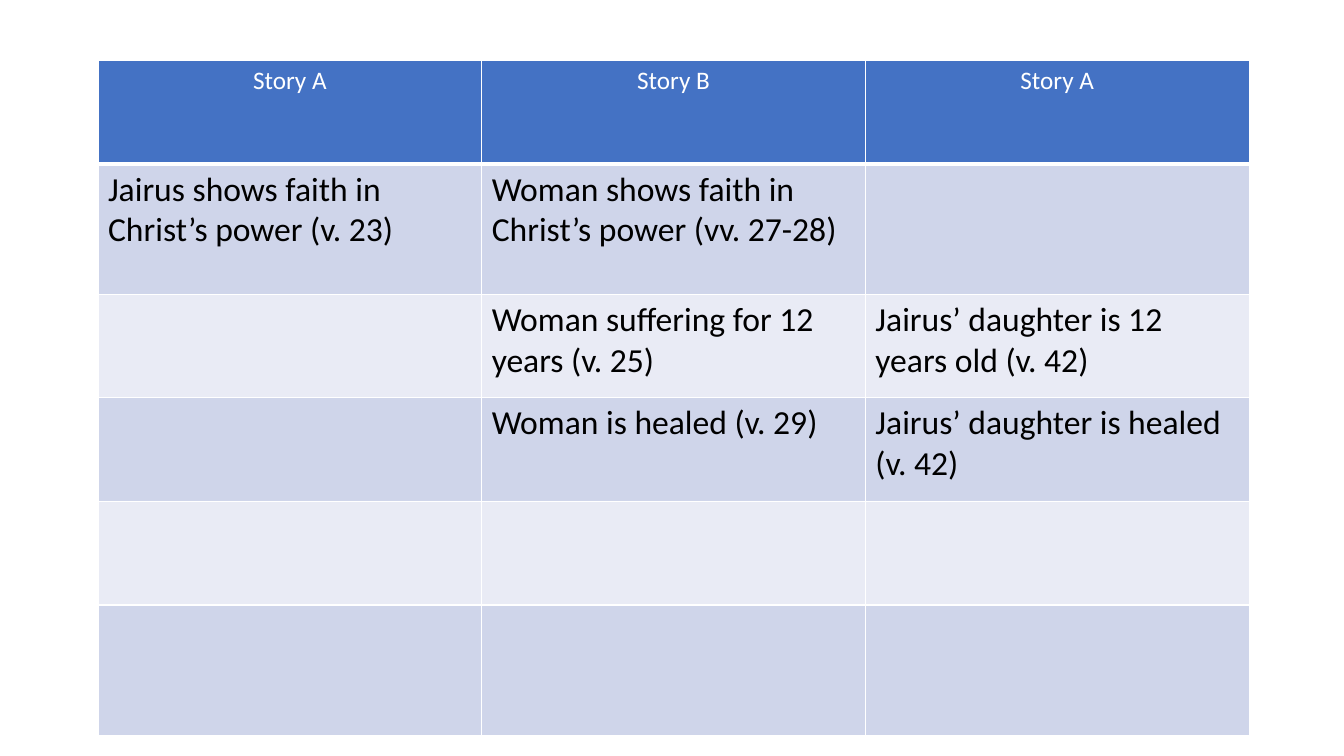
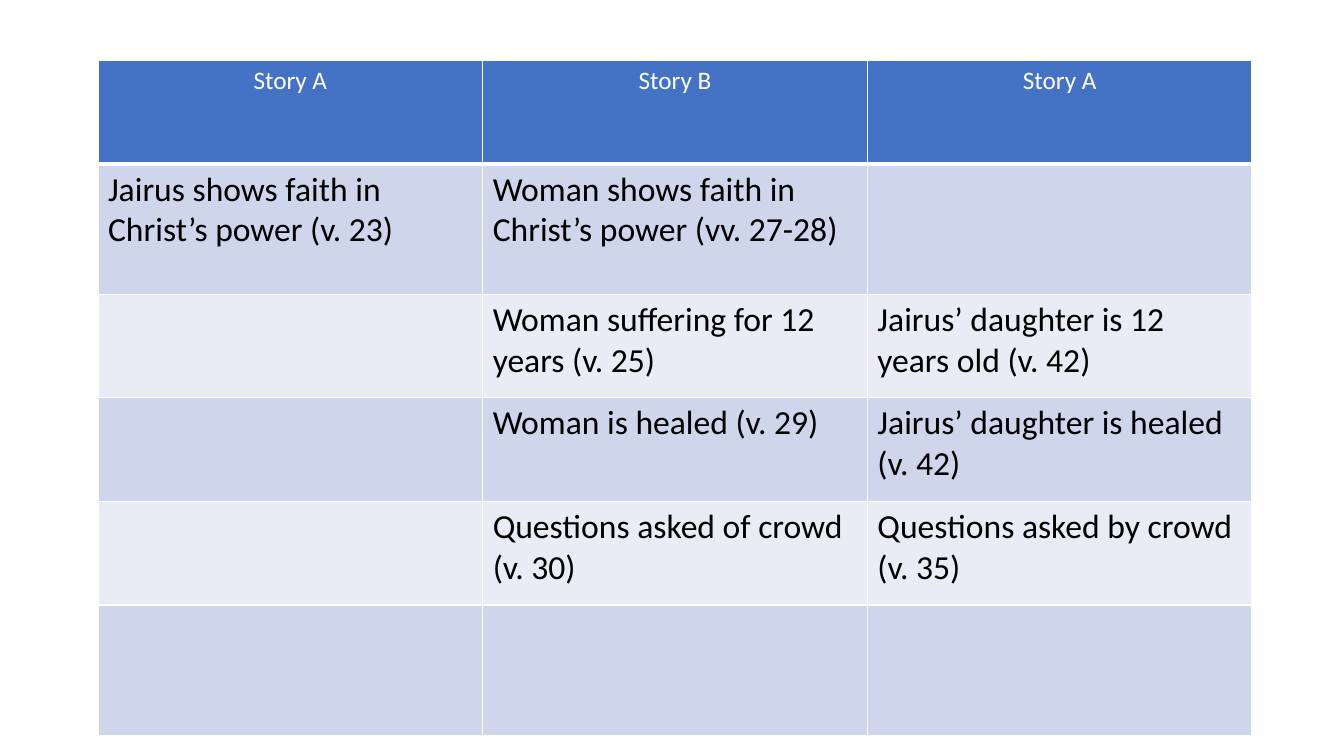
from pptx import Presentation
from pptx import util as u
from pptx.dml import color
from pptx.enum import text
from pptx.oxml import ns
from lxml import etree

# Wording: the second slide adds one more pair of parallels
HEAD = ["Story A", "Story B", "Story A"]
PAIRS = [
    ["Jairus shows faith in Christ’s power (v. 23)",
     "Woman shows faith in Christ’s power (vv. 27-28)", ""],
    ["", "Woman suffering for 12 years (v. 25)",
     "Jairus’ daughter is 12 years old (v. 42)"],
    ["", "Woman is healed (v. 29)", "Jairus’ daughter is healed (v. 42)"],
]
CROWD = ["", "Questions asked of crowd (v. 30)",
         "Questions asked by crowd (v. 35)"]
BLANK = ["", "", ""]


def rgb(code):
    return color.RGBColor.from_string(code)


def write(frame, words, size=24, ink="000000", font="Calibri",
          align=text.PP_ALIGN.LEFT):
    para = frame.paragraphs[0]
    para.alignment = align
    run = para.add_run()
    run.text = words
    run.font.name = font
    run.font.size = u.Pt(size)
    run.font.bold = False
    run.font.color.rgb = rgb(ink)


class Deck:
    # Shared style
    WHITE = "FFFFFF"
    BLUE = "4472C4"
    BANDS = ["CFD5EA", "E9EBF5"]
    LEFT, TOP = 70, 43.2
    ROWS = [74, 93, 74, 74, 74, 93]
    THIN, THICK = 1, 3

    def __init__(self):
        self.prs = Presentation()
        self.prs.slide_width = u.Pt(960)
        self.prs.slide_height = u.Pt(540)
        self.slide = None

    def page(self):
        self.slide = self.prs.slides.add_slide(self.prs.slide_layouts[6])

    def edges(self, cell, top, base):
        """Draw the four white borders of a cell."""
        props = cell._tc.get_or_add_tcPr()
        sides = {"L": self.THIN, "R": self.THIN, "T": top, "B": base}
        for side, width in sides.items():
            line = etree.SubElement(props, ns.qn(f"a:ln{side}"),
                                    w=str(u.Pt(width)))
            fill = etree.SubElement(line, ns.qn("a:solidFill"))
            etree.SubElement(fill, ns.qn("a:srgbClr"), val=self.WHITE)

    def cell(self, cell, words, row):
        """Style one cell by its row: header or banded body."""
        self.edges(cell, self.THICK if row == 1 else self.THIN,
                   self.THICK if row == 0 else self.THIN)
        cell.fill.solid()
        shade = self.BANDS[(row - 1) % 2] if row else self.BLUE
        cell.fill.fore_color.rgb = rgb(shade)
        if not words:
            return
        if row:
            write(cell.text_frame, words)
        else:
            write(cell.text_frame, words, size=18, ink=self.WHITE,
                  align=text.PP_ALIGN.CENTER)

    def table(self, rows, width):
        """Add a table with equal columns of the given width."""
        count = len(rows[0])
        grid = self.slide.shapes.add_table(
            len(rows), count, u.Pt(self.LEFT), u.Pt(self.TOP),
            u.Pt(width * count), u.Pt(sum(self.ROWS))).table
        for col in grid.columns:
            col.width = u.Pt(width)
        for r, (line, height) in enumerate(zip(rows, self.ROWS)):
            grid.rows[r].height = u.Pt(height)
            for c, words in enumerate(line):
                self.cell(grid.cell(r, c), words, r)


def main():
    deck = Deck()
    # Each slide: its fourth pair and its column width
    for pair, width in [(BLANK, 274.1), (CROWD, 274.8)]:
        deck.page()
        deck.table([HEAD, *PAIRS, pair, BLANK], width)
    deck.prs.save("out.pptx")


if __name__ == "__main__":
    main()
